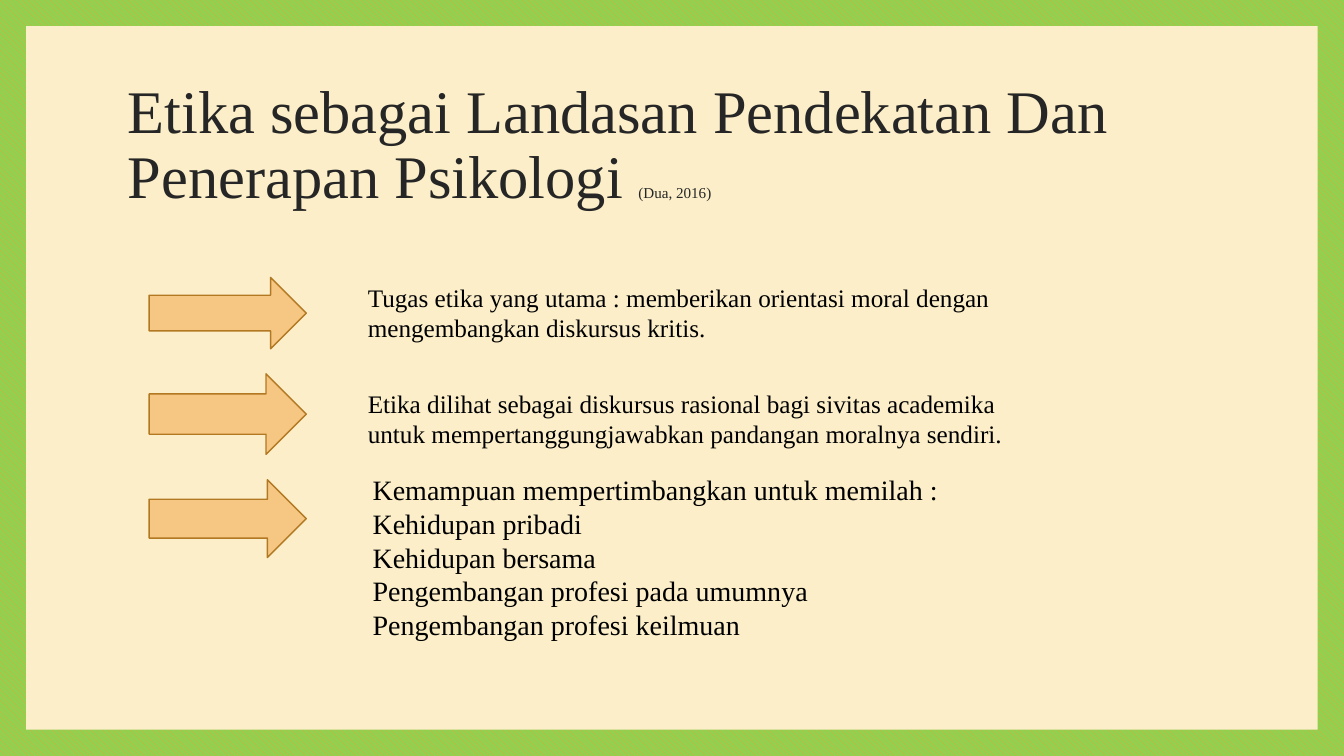
from dataclasses import dataclass

import pptx
import pptx.dml.color
import pptx.enum.dml
import pptx.enum.shapes
import pptx.enum.text
import pptx.util
from pptx.util import Cm

SLIDE_WIDTH, SLIDE_HEIGHT = 33.87, 19.05
BORDER = 0.66
ARROW_LEFT, ARROW_WIDTH = 3.76, 3.96
TYPEFACE = "Times New Roman"


@dataclass(frozen=True)
class Box:
    left: float
    top: float
    width: float
    height: float

    def lengths(self) -> tuple:
        return Cm(self.left), Cm(self.top), Cm(self.width), Cm(self.height)


@dataclass(frozen=True)
class Span:
    text: str
    size: float
    colour: str = "000000"


@dataclass(frozen=True)
class Point:
    arrow_top: float
    arrow_height: float
    box: Box
    size: float
    lines: tuple[str, ...]


TITLE_BOX = Box(2.97, 1.78, 27.94, 3.81)
TITLE_SPANS = [
    Span("Etika sebagai Landasan Pendekatan Dan Penerapan Psikologi ", 43.2, "262626"),
    Span("(Dua, 2016)", 10.8, "262626"),
]

POINTS = [
    Point(6.99, 1.8, Box(9.02, 6.99, 17.09, 1.8), 18, (
        "Tugas etika yang utama : memberikan orientasi moral dengan "
        "mengembangkan diskursus kritis.",
    )),
    Point(9.42, 2.03, Box(9.02, 9.65, 16.61, 1.8), 18, (
        "Etika dilihat sebagai diskursus rasional bagi sivitas academika "
        "untuk mempertanggungjawabkan pandangan moralnya sendiri.",
    )),
    Point(12.09, 1.96, Box(9.14, 11.79, 16.84, 4.52), 20, (
        "Kemampuan mempertimbangkan untuk memilah :",
        "Kehidupan pribadi",
        "Kehidupan bersama",
        "Pengembangan profesi pada umumnya",
        "Pengembangan profesi keilmuan",
    )),
]


def hex_colour(value: str) -> pptx.dml.color.RGBColor:
    return pptx.dml.color.RGBColor.from_string(value)


def apply_format(target: object, values: dict) -> None:
    for name, value in values.items():
        setattr(target, name, value)


def paint_background(slide: pptx.slide.Slide) -> None:
    fill = slide.background.fill
    fill.patterned()
    fill.pattern = pptx.enum.dml.MSO_PATTERN.WIDE_DOWNWARD_DIAGONAL
    fill.fore_color.rgb = hex_colour("F0A22E")
    fill.back_color.rgb = hex_colour("92D050")


def add_filled_shape(slide: pptx.slide.Slide, kind: pptx.enum.shapes.MSO_SHAPE,
                     box: Box, fill: str, outline: str | None = None) -> None:
    shape = slide.shapes.add_shape(kind, *box.lengths())
    shape.shadow.inherit = False
    shape.fill.solid()
    shape.fill.fore_color.rgb = hex_colour(fill)
    if outline is None:
        shape.line.fill.background()
    else:
        shape.line.color.rgb = hex_colour(outline)
        shape.line.width = pptx.util.Pt(1)


def add_text(slide: pptx.slide.Slide, box: Box, paragraphs: list[list[Span]],
             frame_format: dict, paragraph_format: dict) -> None:
    frame = slide.shapes.add_textbox(*box.lengths()).text_frame
    apply_format(frame, {"word_wrap": True, **frame_format})
    for index, spans in enumerate(paragraphs):
        paragraph = frame.add_paragraph() if index else frame.paragraphs[0]
        apply_format(paragraph, paragraph_format)
        for span in spans:
            run = paragraph.add_run()
            run.text = span.text
            apply_format(run.font, {"name": TYPEFACE, "size": pptx.util.Pt(span.size)})
            run.font.color.rgb = hex_colour(span.colour)


def add_point(slide: pptx.slide.Slide, point: Point) -> None:
    arrow_box = Box(ARROW_LEFT, point.arrow_top, ARROW_WIDTH, point.arrow_height)
    add_filled_shape(slide, pptx.enum.shapes.MSO_SHAPE.RIGHT_ARROW, arrow_box,
                     "F6C782", "B27822")
    add_text(slide, point.box, [[Span(line, point.size)] for line in point.lines],
             {"auto_size": pptx.enum.text.MSO_AUTO_SIZE.SHAPE_TO_FIT_TEXT}, {})


def main() -> None:
    presentation = pptx.Presentation()
    apply_format(presentation, {"slide_width": Cm(SLIDE_WIDTH),
                                "slide_height": Cm(SLIDE_HEIGHT)})
    slide = presentation.slides.add_slide(presentation.slide_layouts[6])
    paint_background(slide)
    panel = Box(BORDER, BORDER, SLIDE_WIDTH - 2 * BORDER, SLIDE_HEIGHT - 2 * BORDER)
    add_filled_shape(slide, pptx.enum.shapes.MSO_SHAPE.RECTANGLE, panel, "FBEEC9")
    add_text(slide, TITLE_BOX, [TITLE_SPANS],
             {"vertical_anchor": pptx.enum.text.MSO_ANCHOR.MIDDLE},
             {"line_spacing": 0.9})
    for point in POINTS:
        add_point(slide, point)
    presentation.save("out.pptx")


if __name__ == "__main__":
    main()
